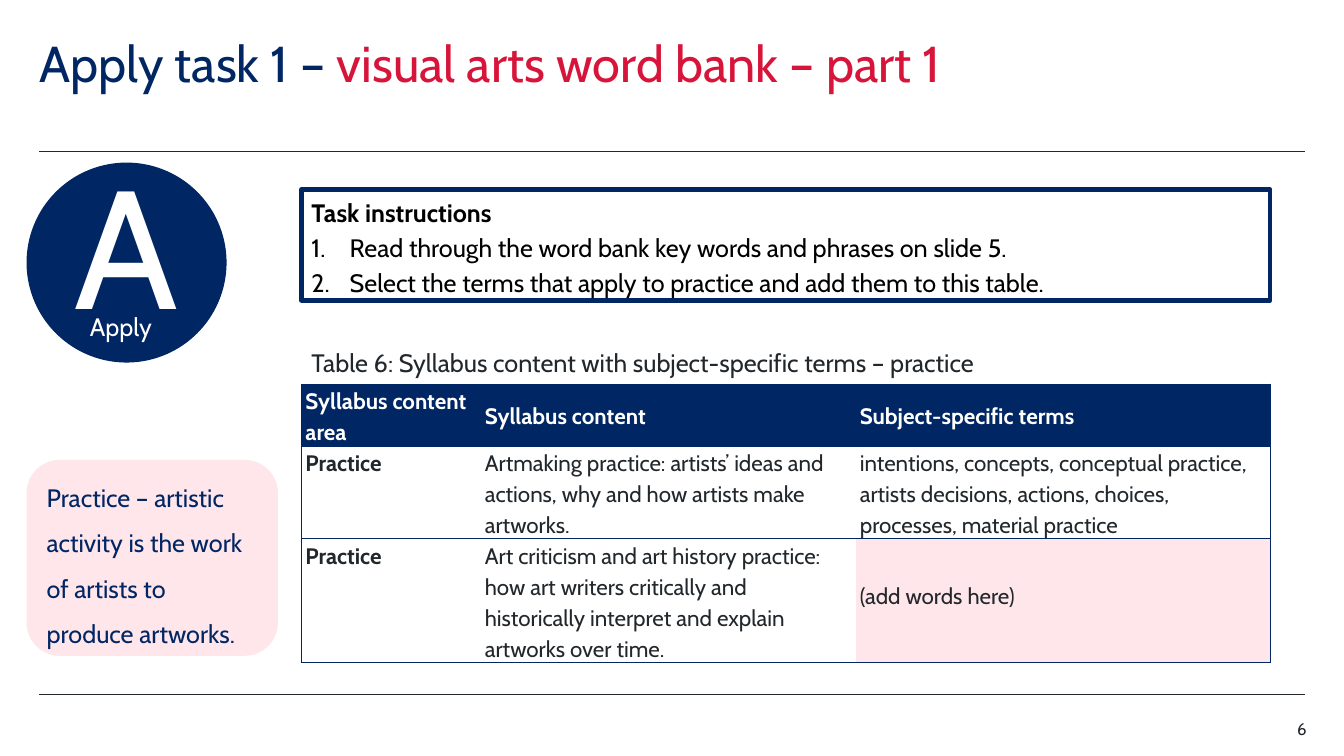
from dataclasses import dataclass
from typing import NamedTuple

from lxml.etree import SubElement
from pptx import Presentation
from pptx.dml.color import RGBColor
from pptx.enum.shapes import MSO_CONNECTOR, MSO_SHAPE
from pptx.enum.text import MSO_ANCHOR, MSO_AUTO_SIZE, PP_ALIGN
from pptx.oxml.ns import qn
from pptx.util import Emu, Inches, Pt


@dataclass(frozen=True)
class Theme:
    font: str = "Cabin"
    navy: str = "002664"
    red: str = "D7153A"
    pink: str = "FFE6EA"
    ink: str = "22272B"
    black: str = "000000"
    white: str = "FFFFFF"
    title: int = 36
    letter: int = 120
    body: int = 18
    cell: int = 16
    small: int = 12
    rule: float = 0.5


class Box(NamedTuple):
    """A place on the slide, in percent of its width and height."""
    left: float
    top: float
    width: float
    height: float


class Run(NamedTuple):
    text: str
    color: str
    size: float
    bold: bool = False


class Para(NamedTuple):
    runs: list[Run]
    spacing: float = 1.0
    align: PP_ALIGN = PP_ALIGN.LEFT
    numbered: bool = False


class Panel(NamedTuple):
    kind: MSO_SHAPE
    box: Box
    fill: str
    line: str
    line_width: float
    paras: list[Para]
    bottom_inset: float = 0.05


class Label(NamedTuple):
    box: Box
    para: Para
    inset: bool = False


class Cell(NamedTuple):
    text: str
    bold: bool = False
    fill: str = "FFFFFF"
    top_inset: float = 0


T = Theme()
WIDTH, HEIGHT = Inches(13.33), Inches(7.5)
NO_INSETS = (0, 0, 0, 0)
MAIN_LEFT, MAIN_WIDTH, SIDE_LEFT = 22.43, 72.08, 2.03
RULE_LEFT, RULE_RIGHT, RULE_TOPS = 2.93, 97.13, (20, 91.87)

TITLE_BOX = Box(RULE_LEFT, 5.2, 82.65, 14.67)
TITLE = Para([Run("Apply task 1 – ", T.navy, T.title),
              Run("visual arts word bank – part 1", T.red, T.title)], 0.9)

PANELS = [
    Panel(MSO_SHAPE.OVAL, Box(SIDE_LEFT, 21.6, 14.78, 26.27), T.navy, T.navy, 1,
          [Para([Run("A", T.white, T.letter)], align=PP_ALIGN.CENTER)], 0.45),
    Panel(MSO_SHAPE.ROUNDED_RECTANGLE, Box(SIDE_LEFT, 60.93, 18.6, 25.73), T.pink, T.pink, 1,
          [Para([Run("Practice – artistic activity is the work of artists to produce artworks.",
                     T.navy, T.body)], 1.5)]),
    Panel(MSO_SHAPE.RECTANGLE, Box(MAIN_LEFT, 25.07, MAIN_WIDTH, 14.67), T.white, T.navy, 3, [
        Para([Run("Task instructions", T.black, T.body, True)], 1.15),
        Para([Run("Read through the word bank key words and phrases on slide 5.",
                  T.black, T.body)], 1.15, numbered=True),
        Para([Run("Select the terms that apply to practice and add them to this table.",
                  T.black, T.body)], 1.15, numbered=True)]),
]

LABELS = [
    Label(Box(6.68, 41.2, 5.48, 6.4), Para([Run("Apply", T.white, T.body)])),
    Label(Box(MAIN_LEFT, 45.33, MAIN_WIDTH, 5.33),
          Para([Run("Table 6: Syllabus content with subject-specific terms – practice",
                    T.ink, T.body)]), True),
    Label(Box(91.28, 95.07, 5.93, 2.67),
          Para([Run("6", T.ink, T.small)], align=PP_ALIGN.RIGHT)),
]

TABLE_BOX = Box(MAIN_LEFT, 50.8, MAIN_WIDTH, 36.8)
COLUMNS, ROWS = (13.35, 27.9, 30.83), (8.13, 12.27, 16.4)
CELLS = [
    [Cell(name, True, T.navy)
     for name in ("Syllabus content area", "Syllabus content", "Subject-specific terms")],
    [Cell("Practice", True),
     Cell("Artmaking practice: artists’ ideas and actions, why and how artists make artworks."),
     Cell("intentions, concepts, conceptual practice, artists decisions, actions, choices, "
          "processes, material practice")],
    [Cell("Practice", True),
     Cell("Art criticism and art history practice: how art writers critically and "
          "historically interpret and explain artworks over time."),
     Cell("(add words here)", fill=T.pink, top_inset=0.4)],
]


def rgb(color: str) -> RGBColor:
    return RGBColor.from_string(color)


def across(share: float) -> Emu:
    return Emu(round(WIDTH * share / 100))


def down(share: float) -> Emu:
    return Emu(round(HEIGHT * share / 100))


def place(box: Box) -> tuple[Emu, Emu, Emu, Emu]:
    return across(box.left), down(box.top), across(box.width), down(box.height)


def set_insets(target, insets: tuple[float, float, float, float]) -> None:
    """Set left, top, right and bottom margins of a text frame or cell, in inches."""
    (target.margin_left, target.margin_top,
     target.margin_right, target.margin_bottom) = map(Inches, insets)


def write(tf, paras: list[Para]) -> None:
    tf.word_wrap = True
    for i, para in enumerate(paras):
        p = tf.add_paragraph() if i else tf.paragraphs[0]
        p.alignment, p.line_spacing = para.align, para.spacing
        if para.numbered:
            pPr = p._p.get_or_add_pPr()
            pPr.set("marL", str(Inches(0.38)))
            pPr.set("indent", str(-Inches(0.38)))
            SubElement(pPr, qn("a:buFont"), typeface="+mj-lt")
            SubElement(pPr, qn("a:buAutoNum"), type="arabicPeriod")
        for run in para.runs:
            r = p.add_run()
            r.text = run.text
            r.font.name, r.font.size, r.font.bold = T.font, Pt(run.size), run.bold
            r.font.color.rgb = rgb(run.color)


def add_title(s) -> None:
    sp = s.shapes.title
    sp.left, sp.top, sp.width, sp.height = place(TITLE_BOX)
    tf = sp.text_frame
    tf.auto_size, tf.vertical_anchor = MSO_AUTO_SIZE.NONE, MSO_ANCHOR.TOP
    set_insets(tf, NO_INSETS)
    write(tf, [TITLE])


def add_rule(s, top: float) -> None:
    line = s.shapes.add_connector(MSO_CONNECTOR.STRAIGHT, across(RULE_LEFT), down(top),
                                  across(RULE_RIGHT), down(top))
    line.line.color.rgb, line.line.width = rgb(T.ink), Pt(T.rule)
    SubElement(line._element.spPr, qn("a:effectLst"))


def add_panel(s, panel: Panel) -> None:
    sp = s.shapes.add_shape(panel.kind, *place(panel.box))
    sp.shadow.inherit = False
    sp.fill.solid()
    sp.fill.fore_color.rgb = rgb(panel.fill)
    sp.line.color.rgb, sp.line.width = rgb(panel.line), Pt(panel.line_width)
    tf = sp.text_frame
    tf.vertical_anchor = MSO_ANCHOR.MIDDLE
    set_insets(tf, (0.1, 0.05, 0.1, panel.bottom_inset))
    write(tf, panel.paras)


def add_label(s, label: Label) -> None:
    tf = s.shapes.add_textbox(*place(label.box)).text_frame
    if label.inset:
        tf.vertical_anchor = MSO_ANCHOR.MIDDLE
    else:
        set_insets(tf, NO_INSETS)
    write(tf, [label.para])


def add_border(cell, side: str, visible: bool) -> None:
    ln = SubElement(cell._tc.get_or_add_tcPr(), qn(f"a:ln{side}"), w=str(Pt(T.rule)))
    if visible:
        SubElement(SubElement(ln, qn("a:solidFill")), qn("a:srgbClr"), val=T.navy)
    else:
        SubElement(ln, qn("a:noFill"))


def add_word_table(s) -> None:
    table = s.shapes.add_table(len(ROWS), len(COLUMNS), *place(TABLE_BOX)).table
    table.horz_banding = False
    for column, width in zip(table.columns, COLUMNS):
        column.width = across(width)
    for i, (row, height) in enumerate(zip(table.rows, ROWS)):
        row.height = down(height)
        for j, (cell, content) in enumerate(zip(row.cells, CELLS[i])):
            cell.vertical_anchor = MSO_ANCHOR.TOP if i else MSO_ANCHOR.MIDDLE
            set_insets(cell, (0.04, content.top_inset, 0.04, 0))
            edges = {"L": j == 0, "R": j == len(COLUMNS) - 1, "T": True, "B": True}
            for side, visible in edges.items():
                add_border(cell, side, visible)
            cell.fill.solid()
            cell.fill.fore_color.rgb = rgb(content.fill)
            color = T.ink if i else T.white
            write(cell.text_frame, [Para([Run(content.text, color, T.cell, content.bold)], 1.15)])


def main() -> None:
    prs = Presentation()
    prs.slide_width, prs.slide_height = WIDTH, HEIGHT
    s = prs.slides.add_slide(prs.slide_layouts[5])
    add_title(s)
    for top in RULE_TOPS:
        add_rule(s, top)
    for panel in PANELS:
        add_panel(s, panel)
    for label in LABELS:
        add_label(s, label)
    add_word_table(s)
    prs.save("out.pptx")


if __name__ == "__main__":
    main()
